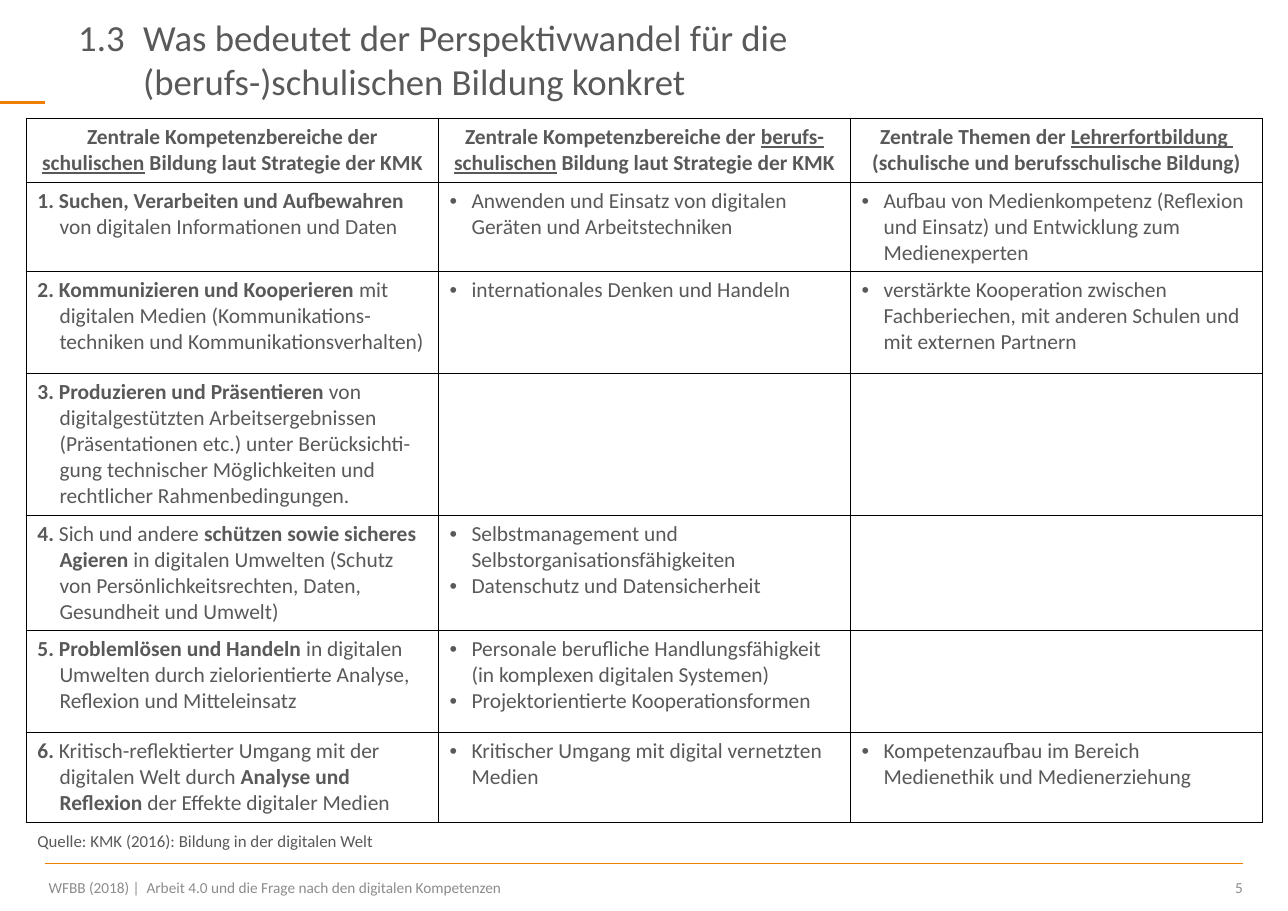
from dataclasses import dataclass
from itertools import product
from typing import NamedTuple

from lxml import etree
from pptx import Presentation
from pptx import util as u
from pptx.dml.color import RGBColor
from pptx.enum import shapes, text
from pptx.oxml import ns

# The page is a fine grid of square cells, a hundredth of an inch each.
COLUMNS, ROWS = 1169, 827
FONT = "Calibri"
DARK, GREY, ORANGE, BLACK = "595959", "8C8C8C", "F07E00", "000000"
TITLE_INDENT, LIST_INDENT = 59, 20
TABLE_LEFT, TABLE_TOP, COLUMN_WIDTH = 24, 108, 374
ROW_HEIGHTS = (57, 61, 93, 108, 93, 93, 65)


@dataclass
class Rule:
    x1: int
    x2: int
    y: int
    weight: float


@dataclass
class Label:
    left: int
    top: int
    width: int
    height: int
    content: str
    size: int
    color: str
    align: text.PP_ALIGN = text.PP_ALIGN.LEFT
    insets: tuple[int, int, int, int] = (10, 5, 10, 5)


class TableRow(NamedTuple):
    school: list[str]
    vocational: list[str]
    training: list[str]


RULES = [Rule(0, 41, 93, 2), Rule(41, 1128, 784, 1)]
LABELS = [
    Label(41, 785, 1017, 41,
          " WFBB (2018)\u2002|\u2002 Arbeit 4.0 und die Frage nach den digitalen Kompetenzen".replace("\u2002", " "),
          10, GREY, insets=(0, 12, 0, 0)),
    Label(1058, 785, 70, 41, "5", 10, GREY, text.PP_ALIGN.RIGHT, (0, 12, 0, 0)),
    Label(24, 749, 580, 29, "Quelle: KMK (2016): Bildung in der digitalen Welt", 11, DARK),
]
TITLE = ["1.3\tWas bedeutet der Perspektivwandel für die",
         "\t(berufs-)schulischen Bildung konkret"]

# In table texts, * switches bold and _ switches underline.
HEADER = TableRow(
    ["*Zentrale Kompetenzbereiche der _schulischen_ Bildung laut Strategie der KMK"],
    ["*Zentrale Kompetenzbereiche der _berufs-schulischen_ Bildung laut Strategie der KMK"],
    ["*Zentrale Themen der _Lehrerfortbildung _", "*(schulische und berufsschulische Bildung)"],
)
BODY = [
    TableRow(
        ["*1. Suchen, Verarbeiten und Aufbewahren *von digitalen Informationen und Daten"],
        ["Anwenden und Einsatz von digitalen Geräten und Arbeitstechniken"],
        ["Aufbau von Medienkompetenz (Reflexion und Einsatz) und Entwicklung zum Medienexperten"]),
    TableRow(
        ["*2. Kommunizieren und Kooperieren *mit digitalen Medien "
         "(Kommunikations-techniken und Kommunikationsverhalten)"],
        ["internationales Denken und Handeln"],
        ["verstärkte Kooperation zwischen Fachberiechen, mit anderen Schulen und mit externen Partnern"]),
    TableRow(
        ["*3. Produzieren und Präsentieren *von digitalgestützten Arbeitsergebnissen "
         "(Präsentationen etc.) unter Berücksichti-gung technischer Möglichkeiten "
         "und rechtlicher Rahmenbedingungen."],
        [], []),
    TableRow(
        ["*4. *Sich und andere *schützen sowie sicheres Agieren *in digitalen Umwelten "
         "(Schutz von Persönlichkeitsrechten, Daten, Gesundheit und Umwelt)"],
        ["Selbstmanagement und Selbstorganisationsfähigkeiten", "Datenschutz und Datensicherheit"],
        []),
    TableRow(
        ["*5. Problemlösen und Handeln *in digitalen Umwelten durch zielorientierte Analyse, "
         "Reflexion und Mitteleinsatz"],
        ["Personale berufliche Handlungsfähigkeit (in komplexen digitalen Systemen)",
         "Projektorientierte Kooperationsformen"],
        []),
    TableRow(
        ["*6. *Kritisch-reflektierter Umgang mit der digitalen Welt durch "
         "*Analyse und Reflexion *der Effekte digitaler Medien"],
        ["Kritischer Umgang mit digital vernetzten Medien"],
        ["Kompetenzaufbau im Bereich Medienethik und Medienerziehung"]),
]


def grid(cells: float) -> u.Emu:
    return u.Inches(cells / 100)


def rgb(color: str) -> RGBColor:
    return RGBColor.from_string(color)


def add_run(p, content: str, size: int, color: str, bold=False, underline=False) -> None:
    r = p.add_run()
    r.text = content
    r.font.name, r.font.size, r.font.color.rgb = FONT, u.Pt(size), rgb(color)
    r.font.bold, r.font.underline = bold, underline


def add_marked_runs(p, marked: str) -> None:
    """Split a table text at its * and _ switches and add one run per part."""
    for i, bold_part in enumerate(marked.split("*")):
        for j, part in enumerate(bold_part.split("_")):
            if part:
                add_run(p, part, 14, DARK, bold=i % 2 == 1, underline=j % 2 == 1)


def hang(p, indent: int) -> None:
    pPr = p._p.get_or_add_pPr()
    pPr.set("marL", str(grid(indent)))
    pPr.set("indent", str(-grid(indent)))


def add_bullet(p) -> None:
    pPr = p._p.get_or_add_pPr()
    etree.SubElement(pPr, ns.qn("a:buFont")).set("typeface", "Arial")
    etree.SubElement(pPr, ns.qn("a:buChar")).set("char", "•")


def paragraphs(tf, count: int) -> list:
    return [tf.paragraphs[0]] + [tf.add_paragraph() for _ in range(count - 1)]


def add_rule(s, rule: Rule) -> None:
    line = s.shapes.add_connector(shapes.MSO_CONNECTOR.STRAIGHT, grid(rule.x1), grid(rule.y),
                                  grid(rule.x2), grid(rule.y))
    line.line.color.rgb, line.line.width = rgb(ORANGE), u.Pt(rule.weight)
    etree.SubElement(line._element.spPr, ns.qn("a:effectLst"))


def add_label(s, label: Label) -> None:
    sp = s.shapes.add_textbox(grid(label.left), grid(label.top), grid(label.width), grid(label.height))
    tf = sp.text_frame
    tf.word_wrap = True
    tf.margin_left, tf.margin_top, tf.margin_right, tf.margin_bottom = map(grid, label.insets)
    p = tf.paragraphs[0]
    p.alignment = label.align
    add_run(p, label.content, label.size, label.color)


def fill_title(s) -> None:
    sp = s.shapes.title
    sp.left, sp.top, sp.width, sp.height = map(grid, (61, 8, 784, 91))
    tf = sp.text_frame
    tf.auto_size, tf.vertical_anchor = text.MSO_AUTO_SIZE.NONE, text.MSO_ANCHOR.TOP
    for p, content in zip(paragraphs(tf, len(TITLE)), TITLE):
        p.alignment = text.PP_ALIGN.LEFT
        hang(p, TITLE_INDENT)
        add_run(p, content, 24, DARK)


def format_cell(cell) -> None:
    tcPr = cell._tc.get_or_add_tcPr()
    for side in "LRTB":
        border = etree.SubElement(tcPr, ns.qn(f"a:ln{side}"), w=str(u.Pt(0.75)))
        fill = etree.SubElement(border, ns.qn("a:solidFill"))
        etree.SubElement(fill, ns.qn("a:srgbClr"), val=BLACK)
    cell.fill.background()


def add_competence_table(s) -> None:
    rows = [HEADER, *BODY]
    columns = len(HEADER)
    table = s.shapes.add_table(len(rows), columns, grid(TABLE_LEFT), grid(TABLE_TOP),
                               grid(columns * COLUMN_WIDTH), grid(sum(ROW_HEIGHTS))).table
    table.first_row = table.horz_banding = False
    for column in table.columns:
        column.width = grid(COLUMN_WIDTH)
    for row, height in zip(table.rows, ROW_HEIGHTS):
        row.height = grid(height)
    for i, j in product(range(len(rows)), range(columns)):
        cell, contents = table.cell(i, j), rows[i][j]
        format_cell(cell)
        for p, content in zip(paragraphs(cell.text_frame, len(contents)), contents):
            if i == 0:
                p.alignment = text.PP_ALIGN.CENTER
            else:
                hang(p, LIST_INDENT)
                if j > 0:
                    add_bullet(p)
            add_marked_runs(p, content)


def main() -> None:
    prs = Presentation()
    prs.slide_width, prs.slide_height = grid(COLUMNS), grid(ROWS)
    s = prs.slides.add_slide(prs.slide_layouts.get_by_name("Title Only"))
    for rule in RULES:
        add_rule(s, rule)
    fill_title(s)
    add_competence_table(s)
    for label in LABELS:
        add_label(s, label)
    prs.save("out.pptx")


if __name__ == "__main__":
    main()
